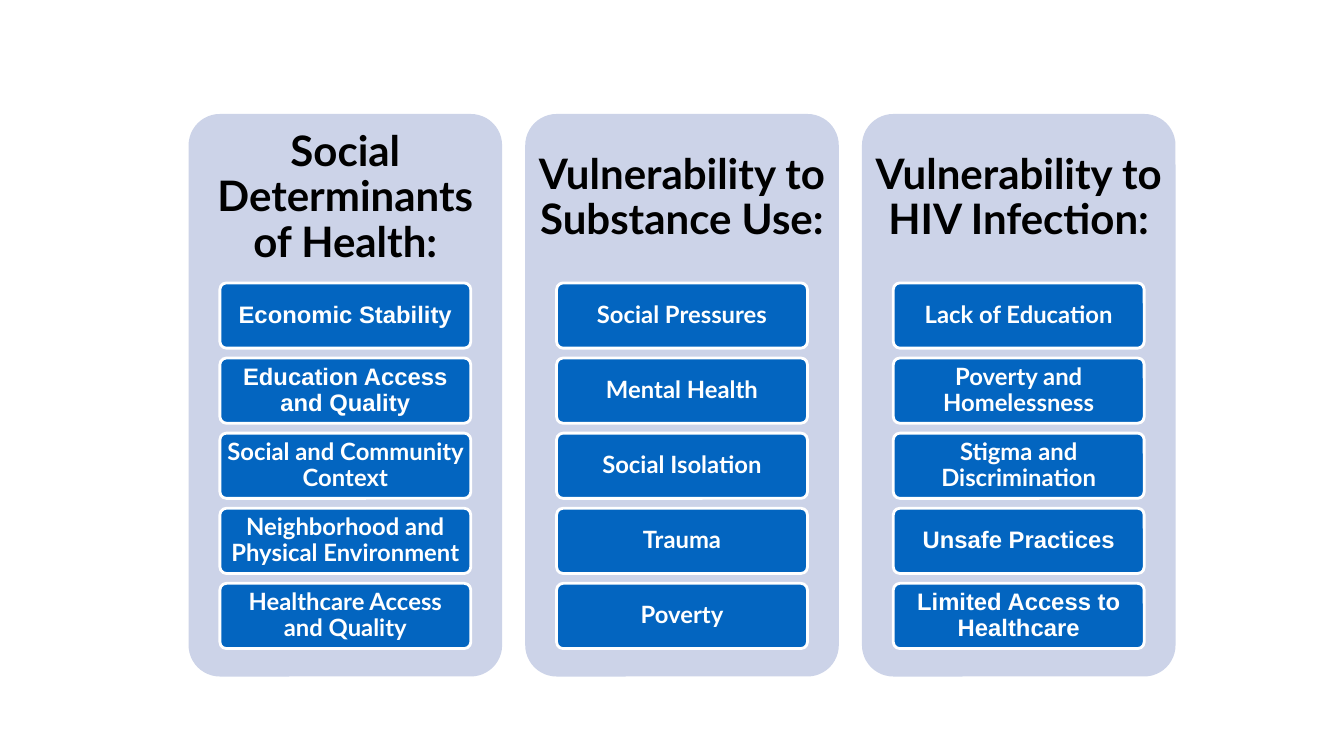
import pptx
import pptx.dml.color
import pptx.enum.shapes
import pptx.enum.text
import pptx.util

Pt = pptx.util.Pt
RGBColor = pptx.dml.color.RGBColor

PANEL_FILL = RGBColor(0xCC, 0xD3, 0xE8)
CARD_FILL = RGBColor(0x03, 0x65, 0xC0)
WHITE = RGBColor(0xFF, 0xFF, 0xFF)
BLACK = RGBColor(0x00, 0x00, 0x00)

# Layout in points
PANEL_LEFT, PANEL_TOP = 134.7, 81.4
PANEL_WIDTH, PANEL_HEIGHT, PANEL_PITCH = 224, 401.8, 240.5
HEADING_HEIGHT = 120.5
CARD_INDENT, CARD_TOP = 22.4, 202.1
CARD_WIDTH, CARD_HEIGHT, CARD_PITCH = 179.2, 46.6, 53.65

# Heading of each panel with its factors
PANELS = [
    ("Social Determinants of Health:",
     ["Economic Stability", "Education Access and Quality",
      "Social and Community Context", "Neighborhood and Physical Environment",
      "Healthcare Access and Quality"]),
    ("Vulnerability to Substance Use:",
     ["Social Pressures", "Mental Health", "Social Isolation", "Trauma",
      "Poverty"]),
    ("Vulnerability to HIV Infection:",
     ["Lack of Education", "Poverty and Homelessness",
      "Stigma and Discrimination", "Unsafe Practices",
      "Limited Access to Healthcare"]),
]
ARIAL_FACTORS = {"Economic Stability", "Education Access and Quality",
                 "Unsafe Practices", "Limited Access to Healthcare"}


class FactorSlide:
    """Holds the slide and the style of its panels, headings and cards."""

    def __init__(self, slide):
        self.shapes = slide.shapes
        self.font = "Lato"

    def rounded(self, left, top, width, height, fill):
        box = self.shapes.add_shape(
            pptx.enum.shapes.MSO_SHAPE.ROUNDED_RECTANGLE,
            Pt(left), Pt(top), Pt(width), Pt(height))
        box.adjustments[0] = 0.1
        box.shadow.inherit = False
        box.fill.solid()
        box.fill.fore_color.rgb = fill
        return box

    def label(self, box, text, size, color, font, inset_x, inset_y):
        frame = box.text_frame
        frame.text = text
        frame.word_wrap = True
        frame.vertical_anchor = pptx.enum.text.MSO_ANCHOR.MIDDLE
        frame.margin_left = frame.margin_right = Pt(inset_x)
        frame.margin_top = frame.margin_bottom = Pt(inset_y)
        paragraph = frame.paragraphs[0]
        paragraph.alignment = pptx.enum.text.PP_ALIGN.CENTER
        paragraph.line_spacing = 0.9
        run_font = paragraph.runs[0].font
        run_font.name = font
        run_font.size = Pt(size)
        run_font.bold = True
        run_font.color.rgb = color

    def panel(self, left):
        back = self.rounded(left, PANEL_TOP, PANEL_WIDTH, PANEL_HEIGHT, PANEL_FILL)
        back.line.fill.background()

    def heading(self, left, text):
        box = self.shapes.add_textbox(
            Pt(left), Pt(PANEL_TOP), Pt(PANEL_WIDTH), Pt(HEADING_HEIGHT))
        self.label(box, text, 30, BLACK, self.font, 8.6, 8.6)

    def card(self, left, top, text):
        box = self.rounded(left, top, CARD_WIDTH, CARD_HEIGHT, CARD_FILL)
        box.line.color.rgb = WHITE
        box.line.width = Pt(2)
        font = "Arial" if text in ARIAL_FACTORS else self.font
        self.label(box, text, 17, WHITE, font, 3.4, 2.55)


def main():
    deck = pptx.Presentation()
    deck.slide_width, deck.slide_height = Pt(960), Pt(540)
    page = FactorSlide(deck.slides.add_slide(deck.slide_layouts[6]))

    # Three panels, each with a heading and a column of cards
    for column, (heading, factors) in enumerate(PANELS):
        left = PANEL_LEFT + column * PANEL_PITCH
        page.panel(left)
        page.heading(left, heading)
        for row, factor in enumerate(factors):
            page.card(left + CARD_INDENT, CARD_TOP + row * CARD_PITCH, factor)

    deck.save("out.pptx")


if __name__ == "__main__":
    main()
